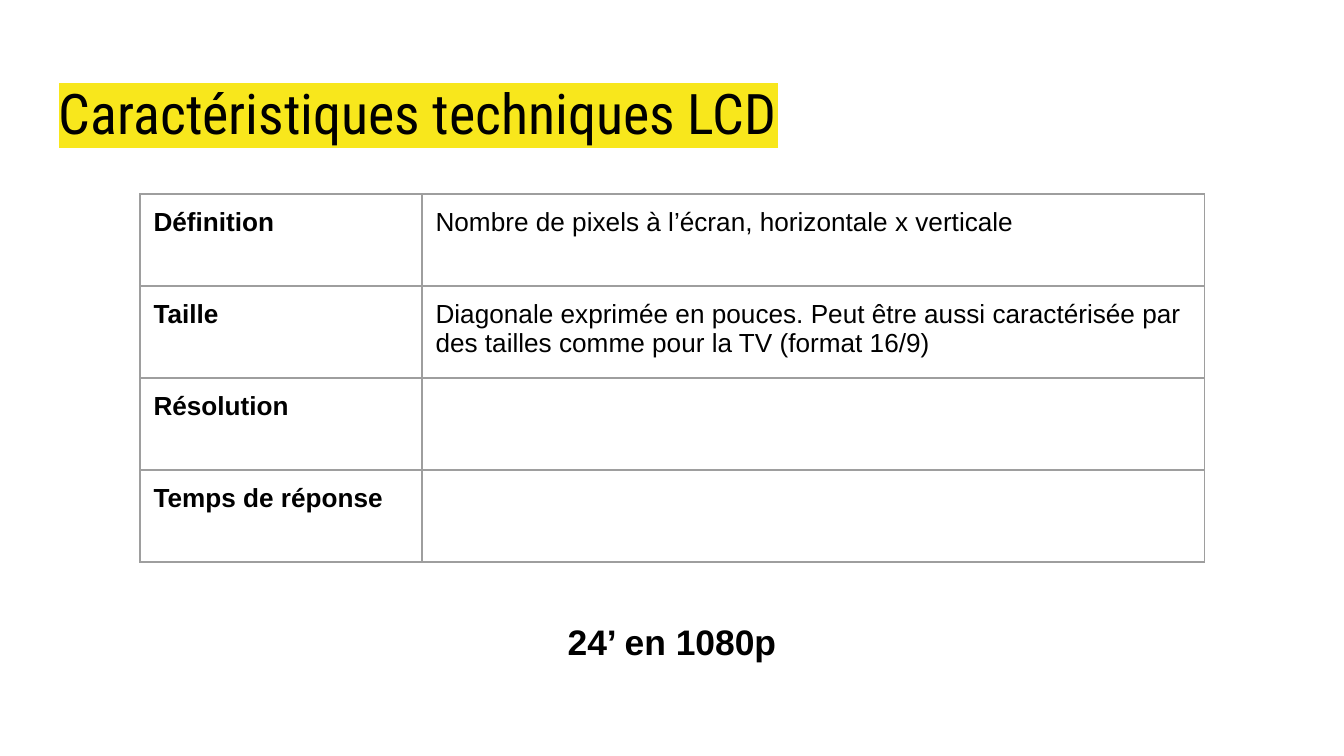
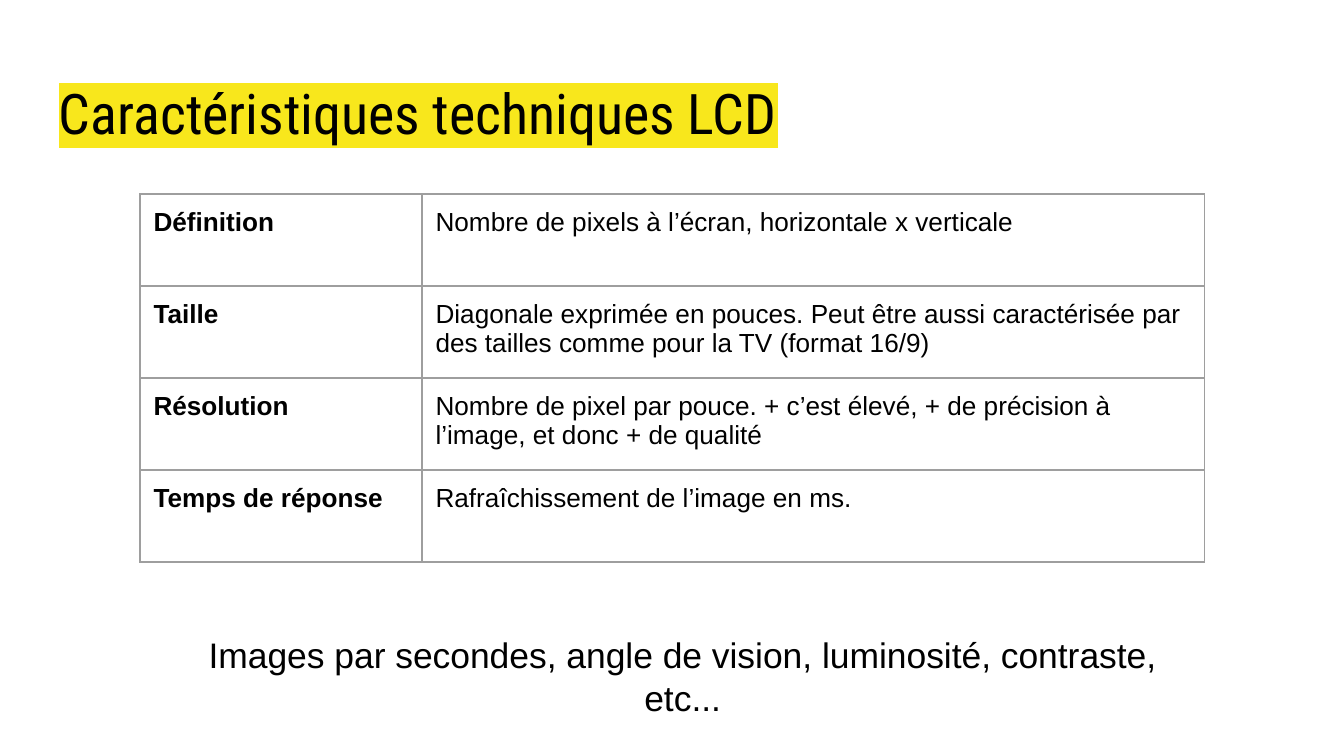
from dataclasses import dataclass

from lxml import etree
from pptx import Presentation
from pptx.dml.color import RGBColor
from pptx.enum.text import MSO_ANCHOR, PP_ALIGN
from pptx.oxml.ns import qn
from pptx.util import Inches, Pt

LEFT, CENTER = PP_ALIGN.LEFT, PP_ALIGN.CENTER
TOP = MSO_ANCHOR.TOP
BLANK_LAYOUT = 6
EDGES = ("a:lnL", "a:lnR", "a:lnT", "a:lnB")


@dataclass(frozen=True)
class Theme:
    """Colours, fonts, type sizes and spacing shared by the slides."""
    ink: str = "000000"
    marker: str = "F8E71C"
    rule: str = "9E9E9E"
    paper: str = "FFFFFF"
    title_font: str = "Roboto Condensed"
    body_font: str = "Arial"
    title_size: int = 30
    note_size: int = 19
    cell_size: int = 14
    rule_width: float = 0.75
    inset: float = 0.1


def write(frame, text, *, font, size, color, bold=False, align=LEFT, highlight=None):
    """Put one formatted paragraph into a text frame."""
    paragraph = frame.paragraphs[0]
    paragraph.alignment = align
    run = paragraph.add_run()
    run.text = text
    run.font.name = font
    run.font.size = Pt(size)
    run.font.bold = bold
    run.font.color.rgb = RGBColor.from_string(color)
    if highlight:
        marker = etree.Element(qn("a:highlight"))
        etree.SubElement(marker, qn("a:srgbClr"), val=highlight)
        run.font._element.find(qn("a:solidFill")).addnext(marker)


def draw_borders(cell, color, width):
    """Rule all four edges of a table cell."""
    properties = cell._tc.get_or_add_tcPr()
    for position, edge in enumerate(EDGES):
        line = etree.Element(qn(edge), w=str(Pt(width)))
        fill = etree.SubElement(line, qn("a:solidFill"))
        etree.SubElement(fill, qn("a:srgbClr"), val=color)
        properties.insert(position, line)


class Deck:
    """Builds slides from elements placed in percent of the slide size."""

    def __init__(self, theme, width, height):
        self.theme = theme
        self.presentation = Presentation()
        self.presentation.slide_width = Inches(width)
        self.presentation.slide_height = Inches(height)
        self.slide = None

    def place(self, left, top, width, height):
        """Turn percentages into slide lengths."""
        across = self.presentation.slide_width / 100
        down = self.presentation.slide_height / 100
        return (round(left * across), round(top * down),
                round(width * across), round(height * down))

    def new_slide(self):
        """Start a slide on a plain background."""
        layout = self.presentation.slide_layouts[BLANK_LAYOUT]
        self.slide = self.presentation.slides.add_slide(layout)
        background = self.slide.background.fill
        background.solid()
        background.fore_color.rgb = RGBColor.from_string(self.theme.paper)

    def inset(self, holder):
        """Give a text frame or cell the shared margins."""
        margin = Inches(self.theme.inset)
        holder.margin_left = holder.margin_right = margin
        holder.margin_top = holder.margin_bottom = margin
        holder.vertical_anchor = TOP

    def text(self, content, area, **style):
        """Add a wrapping text box."""
        frame = self.slide.shapes.add_textbox(*self.place(*area)).text_frame
        frame.word_wrap = True
        self.inset(frame)
        write(frame, content, color=self.theme.ink, **style)

    def title(self, content):
        """Add the highlighted slide title."""
        self.text(content, (3.41, 8.65, 93.18, 11.2), font=self.theme.title_font,
                  size=self.theme.title_size, highlight=self.theme.marker)

    def note(self, content, area, bold=False):
        """Add the centred remark under the table."""
        self.text(content, area, font=self.theme.body_font,
                  size=self.theme.note_size, bold=bold, align=CENTER)

    def glossary(self, entries, area, term_width):
        """Add a two-column table of terms and meanings."""
        left, top, width, height = self.place(*area)
        table = self.slide.shapes.add_table(
            len(entries), 2, left, top, width, height).table
        table.first_row = table.horz_banding = False
        table.columns[0].width = round(width * term_width)
        table.columns[1].width = width - table.columns[0].width
        for row, entry in zip(table.rows, entries):
            row.height = round(height / len(entries))
            for column, (cell, content) in enumerate(zip(row.cells, entry)):
                self.inset(cell)
                cell.fill.background()
                draw_borders(cell, self.theme.rule, self.theme.rule_width)
                if content:
                    write(cell.text_frame, content, font=self.theme.body_font,
                          size=self.theme.cell_size, color=self.theme.ink,
                          bold=column == 0)


TERMS = ("Définition", "Taille", "Résolution", "Temps de réponse")
MEANINGS = (
    "Nombre de pixels à l’écran, horizontale x verticale",
    "Diagonale exprimée en pouces. Peut être aussi caractérisée par "
    "des tailles comme pour la TV (format 16/9)",
    "Nombre de pixel par pouce. + c’est élevé, + de précision à l’image, "
    "et donc + de qualité",
    "Rafraîchissement de l’image en ms.",
)


def add_lcd_slide(deck, revealed, remark, remark_area, bold=False):
    """Add one slide showing the first revealed meanings."""
    shown = [meaning if index < revealed else ""
             for index, meaning in enumerate(MEANINGS)]
    deck.new_slide()
    deck.title("Caractéristiques techniques LCD")
    deck.glossary(list(zip(TERMS, shown)), (10.42, 25.65, 79.2, 48.7), 0.265)
    deck.note(remark, remark_area, bold)


def main():
    """Build and save the deck."""
    deck = Deck(Theme(), 10, 10 * 9 / 16)
    add_lcd_slide(deck, 2, "24’ en 1080p", (23.65, 80.25, 52.7, 14.9), bold=True)
    add_lcd_slide(deck, len(MEANINGS),
                  "Images par secondes, angle de vision, luminosité, contraste, etc...",
                  (13.6, 82, 74.4, 8.4))
    deck.presentation.save("out.pptx")


if __name__ == "__main__":
    main()
